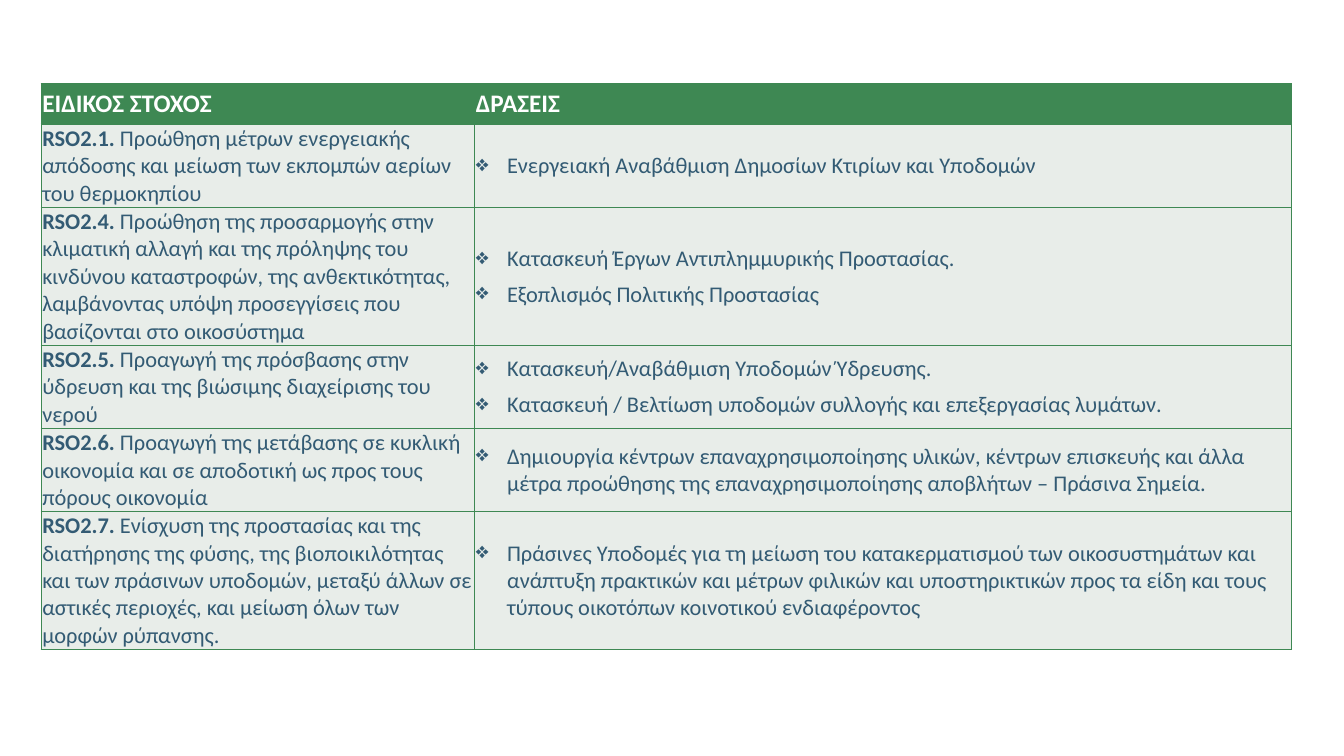
from lxml import etree
from pptx import Presentation
from pptx.dml.color import RGBColor
from pptx.enum.text import MSO_ANCHOR
from pptx.oxml.ns import qn
from pptx.util import Inches, Pt

MIDDLE = MSO_ANCHOR.MIDDLE
GREEN = RGBColor(0x3E, 0x88, 0x53)
PALE = RGBColor(0xE8, 0xED, 0xE9)
BLUE = RGBColor(0x33, 0x5B, 0x74)
WHITE = RGBColor(0xFF, 0xFF, 0xFF)

CELL_FORMAT = {
    "vertical_anchor": MIDDLE,
    "margin_left": Inches(0.01),
    "margin_right": Inches(0.01),
    "margin_top": Inches(0.01),
    "margin_bottom": Inches(0),
}
HEADING_FONT = {"name": "Calibri", "size": Pt(18), "bold": True}
BODY_FONT = {"name": "Calibri", "size": Pt(16), "bold": False}
CODE_FONT = {**BODY_FONT, "bold": True}

COLUMN_WIDTHS = [4.3, 8.1]
ROW_HEIGHTS = [0.4, 0.82, 1.36, 0.82, 0.82, 1.36]
HEADINGS = ["ΕΙΔΙΚΟΣ ΣΤΟΧΟΣ", "ΔΡΑΣΕΙΣ"]
OBJECTIVES = [
    ("RSO2.1. ",
     "Προώθηση μέτρων ενεργειακής απόδοσης και μείωση των εκπομπών αερίων "
     "του θερμοκηπίου",
     ["Ενεργειακή Αναβάθμιση Δημοσίων Κτιρίων και Υποδομών"]),
    ("RSO2.4. ",
     "Προώθηση της προσαρμογής στην κλιματική αλλαγή και της πρόληψης του "
     "κινδύνου καταστροφών, της ανθεκτικότητας, λαμβάνοντας υπόψη "
     "προσεγγίσεις που βασίζονται στο οικοσύστημα",
     ["Κατασκευή Έργων Αντιπλημμυρικής Προστασίας.",
      "Εξοπλισμός Πολιτικής Προστασίας"]),
    ("RSO2.5. ",
     "Προαγωγή της πρόσβασης στην ύδρευση και της βιώσιμης διαχείρισης του "
     "νερού",
     ["Κατασκευή/Αναβάθμιση Υποδομών Ύδρευσης.",
      "Κατασκευή / Βελτίωση υποδομών συλλογής και επεξεργασίας λυμάτων."]),
    ("RSO2.6. ",
     "Προαγωγή της μετάβασης σε κυκλική οικονομία και σε αποδοτική ως προς "
     "τους πόρους οικονομία",
     ["Δημιουργία κέντρων επαναχρησιμοποίησης υλικών, κέντρων επισκευής και "
      "άλλα μέτρα προώθησης της επαναχρησιμοποίησης αποβλήτων – Πράσινα "
      "Σημεία."]),
    ("RSO2.7. ",
     "Ενίσχυση της προστασίας και της διατήρησης της φύσης, της "
     "βιοποικιλότητας και των πράσινων υποδομών, μεταξύ άλλων σε αστικές "
     "περιοχές, και μείωση όλων των μορφών ρύπανσης.",
     ["Πράσινες Υποδομές για τη μείωση του κατακερματισμού των "
      "οικοσυστημάτων και ανάπτυξη πρακτικών και μέτρων φιλικών και "
      "υποστηρικτικών προς τα είδη και τους τύπους οικοτόπων κοινοτικού "
      "ενδιαφέροντος"]),
]


def apply_format(target, values):
    """Set each named attribute of the target."""
    for name, value in values.items():
        setattr(target, name, value)


def add_borders(cell):
    """Draw a green line on all four sides of a cell."""
    properties = cell._tc.get_or_add_tcPr()
    for side in ("a:lnL", "a:lnR", "a:lnT", "a:lnB"):
        line = etree.SubElement(properties, qn(side), w=str(Pt(1)))
        fill = etree.SubElement(line, qn("a:solidFill"))
        etree.SubElement(fill, qn("a:srgbClr"), val=str(GREEN))


def style_cell(cell, color):
    """Give a cell its margins, borders and fill."""
    apply_format(cell, CELL_FORMAT)
    add_borders(cell)
    cell.fill.solid()
    cell.fill.fore_color.rgb = color


def add_text(paragraph, text, font_format, color):
    """Add one formatted run to a paragraph."""
    run = paragraph.add_run()
    run.text = text
    apply_format(run.font, font_format)
    run.font.color.rgb = color


def add_bullet(paragraph):
    """Give a paragraph a diamond bullet with a hanging indent."""
    properties = paragraph._p.get_or_add_pPr()
    indent = Inches(0.31)
    properties.set("marL", str(indent))
    properties.set("indent", str(-indent))
    etree.SubElement(properties, qn("a:buChar"), char="❖")
    paragraph.space_after = Pt(6)


def fill_actions(cell, actions):
    """Write the actions as a bulleted list."""
    for index, action in enumerate(actions):
        frame = cell.text_frame
        paragraph = frame.add_paragraph() if index else frame.paragraphs[0]
        add_bullet(paragraph)
        add_text(paragraph, action, BODY_FONT, BLUE)


def add_objectives_table(slide):
    """Build the table of specific objectives and their actions."""
    table = slide.shapes.add_table(
        len(ROW_HEIGHTS), len(COLUMN_WIDTHS), Inches(0.41), Inches(0.83),
        Inches(sum(COLUMN_WIDTHS)), Inches(sum(ROW_HEIGHTS))).table
    for column, width in zip(table.columns, COLUMN_WIDTHS):
        column.width = Inches(width)
    for row, height in zip(table.rows, ROW_HEIGHTS):
        row.height = Inches(height)

    for column, heading in enumerate(HEADINGS):
        cell = table.cell(0, column)
        style_cell(cell, GREEN)
        add_text(cell.text_frame.paragraphs[0], heading, HEADING_FONT, WHITE)

    for row, (code, objective, actions) in enumerate(OBJECTIVES, 1):
        objective_cell, actions_cell = table.cell(row, 0), table.cell(row, 1)
        for cell in (objective_cell, actions_cell):
            style_cell(cell, PALE)
        paragraph = objective_cell.text_frame.paragraphs[0]
        add_text(paragraph, code, CODE_FONT, BLUE)
        add_text(paragraph, objective, BODY_FONT, BLUE)
        fill_actions(actions_cell, actions)


def main():
    """Create the slide and save it."""
    presentation = Presentation()
    presentation.slide_width = Inches(13.33)
    presentation.slide_height = Inches(7.5)
    slide = presentation.slides.add_slide(presentation.slide_layouts[6])
    add_objectives_table(slide)
    presentation.save("out.pptx")


if __name__ == "__main__":
    main()
